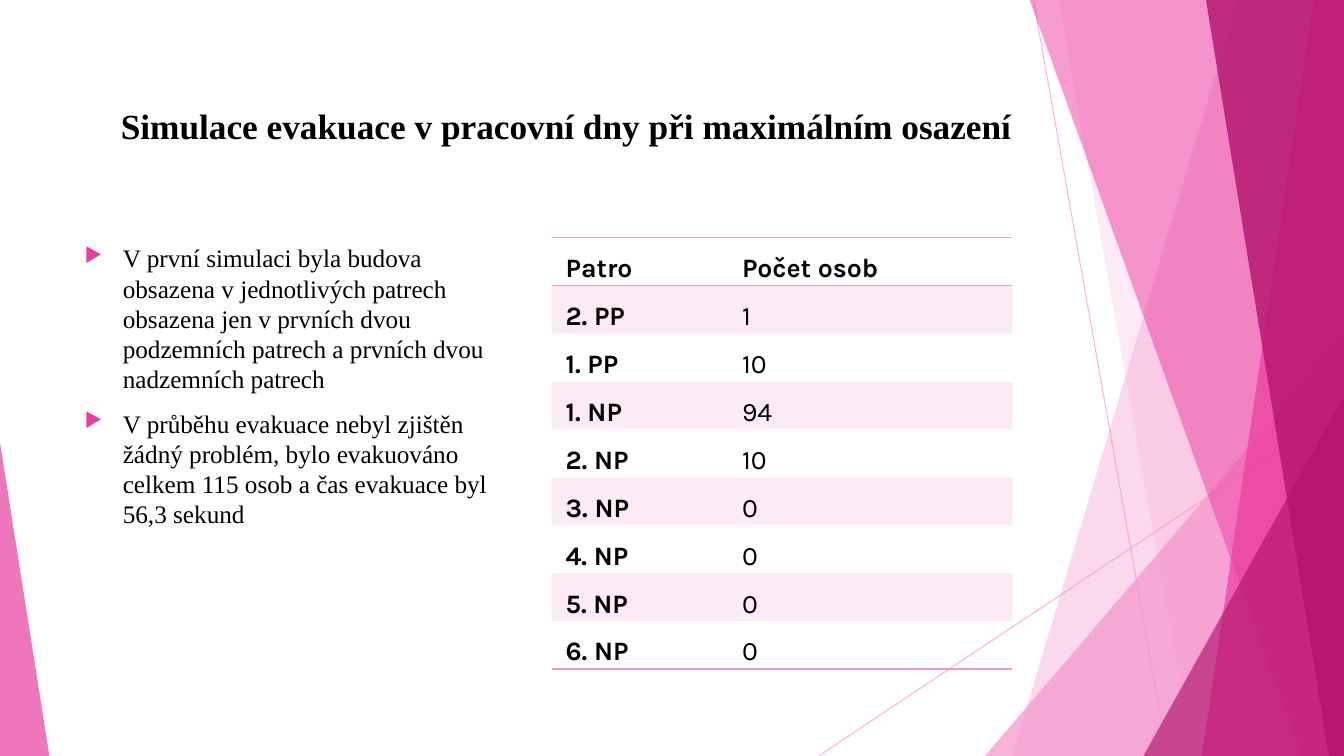
import pptx
import pptx.dml.color
import pptx.enum.shapes
import pptx.enum.text
import pptx.oxml
import pptx.oxml.ns
import pptx.util
from lxml import etree
from pptx.util import Inches

WIDTH, HEIGHT = 13.33, 7.5
COLORS = {"light": "F496CB", "pink": "EB3D9F", "dark": "B2136D", "text": "000000"}
PLAIN_TABLE_STYLE = "{2D5ABB26-0587-4C30-8999-92F81FD0307C}"

TITLE = "Simulace evakuace v pracovní dny při maximálním osazení"
BULLETS = [
    "V první simulaci byla budova obsazena v jednotlivých patrech obsazena jen "
    "v prvních dvou podzemních patrech a prvních dvou nadzemních patrech",
    "V průběhu evakuace nebyl zjištěn žádný problém, bylo evakuováno celkem "
    "115 osob a čas evakuace byl 56,3 sekund",
]
FLOORS = [
    ("Patro", "Počet osob"),
    ("2. PP", "1"),
    ("1. PP", "10"),
    ("1. NP", "94"),
    ("2. NP", "10"),
    ("3. NP", "0"),
    ("4. NP", "0"),
    ("5. NP", "0"),
    ("6. NP", "0"),
]


def add_xml(parent, tag, **attributes):
    return etree.SubElement(parent, pptx.oxml.ns.qn(tag), attributes)


class Page:
    """One slide and the style its elements share."""

    serif = "Times New Roman"
    sans = "Karla"

    def __init__(self, deck):
        self.slide = deck.slides.add_slide(deck.slide_layouts[6])
        self.shapes = self.slide.shapes

    def rgb(self, color):
        return pptx.dml.color.RGBColor.from_string(COLORS[color])

    def tint(self, fill, color, opacity):
        """Fill with a colour at an opacity in percent."""
        fill.solid()
        fill.fore_color.rgb = self.rgb(color)
        self.fade(fill.fore_color, opacity)

    def fade(self, color_format, opacity):
        color = color_format._xFill.find(pptx.oxml.ns.qn("a:srgbClr"))
        add_xml(color, "a:alpha", val=str(opacity * 1000))

    def line(self, x1, y1, x2, y2):
        line = self.shapes.add_connector(
            pptx.enum.shapes.MSO_CONNECTOR.STRAIGHT,
            Inches(x1), Inches(y1), Inches(x2), Inches(y2))
        line.line.width = pptx.util.Pt(0.75)
        line.line.color.rgb = self.rgb("light")
        self.fade(line.line.fill.fore_color, 70)
        add_xml(line._element.spPr, "a:effectLst")

    def finish(self, shape, color, opacity):
        shape.shadow.inherit = False
        shape.line.fill.background()
        self.tint(shape.fill, color, opacity)

    def band(self, top_x, bottom_x, color, opacity, top_right=WIDTH):
        """Full-height band from a slanted left edge to the right slide edge."""
        top = -0.01
        builder = self.shapes.build_freeform(Inches(top_x), Inches(top))
        corners = [(top_right, top), (WIDTH, HEIGHT), (bottom_x, HEIGHT)]
        builder.add_line_segments([(Inches(x), Inches(y)) for x, y in corners])
        self.finish(builder.convert_to_shape(), color, opacity)

    def triangle(self, left, top, width, apex, color, opacity):
        """Triangle standing on the bottom edge; apex runs from 0 to 1."""
        shape = self.shapes.add_shape(
            pptx.enum.shapes.MSO_SHAPE.ISOSCELES_TRIANGLE,
            Inches(left), Inches(top), Inches(width), Inches(HEIGHT - top))
        shape.adjustments[0] = apex
        self.finish(shape, color, opacity)

    def style(self, font, name, size, bold=False):
        font.name = name
        font.size = pptx.util.Pt(size)
        font.bold = bold
        font.color.rgb = self.rgb("text")

    def text_frame(self, left, top, width, height):
        box = self.shapes.add_textbox(
            Inches(left), Inches(top), Inches(width), Inches(height))
        box.text_frame.word_wrap = True
        return box.text_frame

    def title(self, text, left, top, width, height):
        frame = self.text_frame(left, top, width, height)
        frame.margin_top = Inches(0.41)
        frame.text = text
        para = frame.paragraphs[0]
        para.line_spacing = 0.9
        self.style(para.runs[0].font, self.serif, 25.2, bold=True)

    def bullets(self, texts, left, top, width, height):
        frame = self.text_frame(left, top, width, height)
        frame.text = "\n".join(texts)
        for index, para in enumerate(frame.paragraphs):
            if index:
                para.space_before = pptx.util.Pt(10)
            props = para._p.get_or_add_pPr()
            props.set("marL", str(Inches(0.38)))
            props.set("indent", str(Inches(-0.38)))
            add_xml(add_xml(props, "a:buClr"), "a:srgbClr", val=COLORS["pink"])
            add_xml(props, "a:buSzPct", val="80000")
            add_xml(props, "a:buChar", char="▶")
            self.style(para.runs[0].font, self.serif, 18)

    def border(self, cell, tag):
        line = add_xml(cell._tc.get_or_add_tcPr(), tag, w=str(pptx.util.Pt(1)))
        add_xml(add_xml(line, "a:solidFill"), "a:srgbClr", val=COLORS["light"])

    def table(self, rows, left, top, widths, row_height):
        """Table with a bold header and first column and tinted odd rows."""
        frame = self.shapes.add_table(
            len(rows), len(widths), Inches(left), Inches(top),
            Inches(sum(widths)), Inches(row_height * len(rows)))
        table = frame.table
        table._tbl.tblPr.find(pptx.oxml.ns.qn("a:tableStyleId")).text = PLAIN_TABLE_STYLE
        table.horz_banding = False
        for column, width in zip(table.columns, widths):
            column.width = Inches(width)
        for r, values in enumerate(rows):
            table.rows[r].height = Inches(row_height)
            for c, value in enumerate(values):
                cell = table.cell(r, c)
                cell.margin_left = cell.margin_right = Inches(0.14)
                cell.margin_top = cell.margin_bottom = 0
                if r == 0:
                    self.border(cell, "a:lnT")
                if r in (0, len(rows) - 1):
                    self.border(cell, "a:lnB")
                if r % 2:
                    self.tint(cell.fill, "light", 20)
                else:
                    cell.fill.background()
                cell.text = value
                para = cell.text_frame.paragraphs[0]
                para.alignment = pptx.enum.text.PP_ALIGN.JUSTIFY
                para.line_spacing = 1.5
                para.space_after = pptx.util.Pt(6)
                self.style(para.runs[0].font, self.sans, 19, bold=r == 0 or c == 0)


def main():
    deck = pptx.Presentation()
    deck.slide_width, deck.slide_height = Inches(WIDTH), Inches(HEIGHT)
    page = Page(deck)
    page.line(10.25, 0, 11.58, HEIGHT)
    page.line(WIDTH, 4.03, 8.12, HEIGHT)
    page.band(12.28, 10.04, "light", 36)
    page.band(10.5, 11.83, "light", 20)
    page.triangle(9.77, 3.33, 3.56, 1, "light", 72)
    page.band(10.21, 12.91, "pink", 50)
    page.band(13.03, 11.92, "pink", 70)
    page.band(11.96, 13.18, "dark", 80)
    page.triangle(11.34, 3.93, 1.99, 1, "dark", 66)
    page.triangle(0, 4.39, 0.49, 0, "pink", 70)
    page.title(TITLE, 1.1, 0.67, 9.15, 1.44)
    page.bullets(BULLETS, 0.74, 2.36, 4.33, 4.1)
    page.table(FLOORS, 5.47, 2.36, (1.75, 2.82), 0.46)
    deck.save("out.pptx")


if __name__ == "__main__":
    main()
